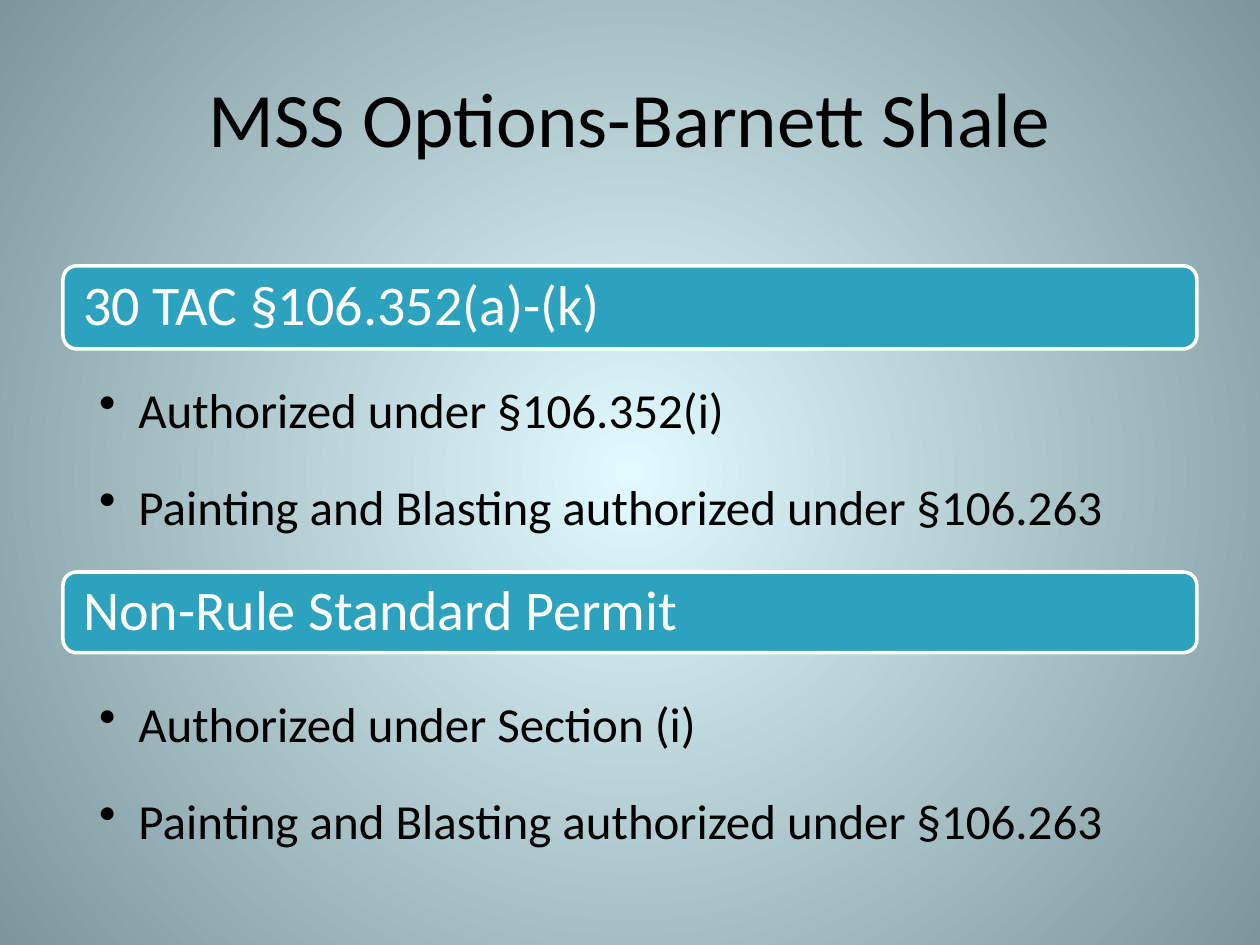
from dataclasses import dataclass

from lxml.etree import SubElement
from pptx import Presentation
from pptx.dml.color import RGBColor
from pptx.enum.shapes import MSO_SHAPE as Shape
from pptx.enum.text import MSO_ANCHOR as Anchor, PP_ALIGN as Align
from pptx.oxml.ns import qn
from pptx.util import Pt


@dataclass(frozen=True)
class Theme:
    font: str = "Calibri"
    title_size: float = 44
    heading_size: float = 32
    bullet_size: float = 28
    text: str = "000000"
    bar: str = "2DA2BF"
    bar_text: str = "FFFFFF"
    glow: str = "E1FAFF"
    edge: str = "7B969C"


@dataclass(frozen=True)
class Section:
    heading: str
    bullets: tuple[str, ...]
    bar_top: float
    bar_height: float
    list_top: float
    list_height: float


THEME = Theme()
LEFT, WIDTH = 36, 648
BULLET_INDENT = 22.5
PAINTING = "Painting and Blasting authorized under §106.263"
SECTIONS = (
    Section("30 TAC §106.352(a)-(k)", ("Authorized under §106.352(i)", PAINTING),
            151.9, 47.5, 197.3, 133.9),
    Section("Non-Rule Standard Permit", ("Authorized under Section (i)", PAINTING),
            326.9, 46.1, 376.6, 83.5),
)


def paint_background(page) -> None:
    fill = page.background.fill
    fill.gradient()
    for stop, color, position in zip(fill.gradient_stops, (THEME.glow, THEME.edge), (0, 1)):
        stop.color.rgb = RGBColor.from_string(color)
        stop.position = position
    # Turn the linear gradient into a circular one
    gradient = page.element.find(".//" + qn("a:gradFill"))
    linear = gradient.find(qn("a:lin"))
    if linear is not None:
        gradient.remove(linear)
    gradient.find(qn("a:gsLst")).addnext(circle := SubElement(gradient, qn("a:path"), path="circle"))
    SubElement(circle, qn("a:fillToRect"), {side: "50000" for side in "ltrb"})


def set_frame(frame, anchor: Anchor, left: float, right: float, vertical: float) -> None:
    frame.word_wrap = True
    frame.vertical_anchor = anchor
    frame.margin_left, frame.margin_right = Pt(left), Pt(right)
    frame.margin_top = frame.margin_bottom = Pt(vertical)


def style_para(para, size: float, color: str, align: Align = Align.LEFT) -> None:
    para.alignment = align
    for span in para.runs:
        span.font.name = THEME.font
        span.font.size = Pt(size)
        span.font.color.rgb = RGBColor.from_string(color)


def add_bullet(para) -> None:
    properties = para._p.get_or_add_pPr()
    properties.set("marL", str(Pt(BULLET_INDENT)))
    properties.set("indent", str(-Pt(BULLET_INDENT)))
    SubElement(properties, qn("a:buChar"), char="•")


def draw_title(page, text: str) -> None:
    box = page.shapes.add_textbox(Pt(LEFT), Pt(21.6), Pt(WIDTH), Pt(90))
    set_frame(box.text_frame, Anchor.MIDDLE, 7.2, 7.2, 3.6)
    box.text_frame.text = text
    style_para(box.text_frame.paragraphs[0], THEME.title_size, THEME.text, Align.CENTER)


def draw_section(page, section: Section) -> None:
    # Heading bar
    bar = page.shapes.add_shape(Shape.ROUNDED_RECTANGLE, Pt(LEFT), Pt(section.bar_top),
                                Pt(WIDTH), Pt(section.bar_height))
    bar.shadow.inherit = False
    bar.fill.solid()
    bar.fill.fore_color.rgb = RGBColor.from_string(THEME.bar)
    bar.line.color.rgb = RGBColor.from_string(THEME.bar_text)
    bar.line.width = Pt(2)
    set_frame(bar.text_frame, Anchor.MIDDLE, 9.3, 9.3, 0)
    bar.text_frame.text = section.heading
    heading = bar.text_frame.paragraphs[0]
    heading.line_spacing = 0.9
    style_para(heading, THEME.heading_size, THEME.bar_text)

    # Bulleted list
    box = page.shapes.add_textbox(Pt(LEFT), Pt(section.list_top),
                                  Pt(WIDTH), Pt(section.list_height))
    set_frame(box.text_frame, Anchor.TOP, 20.6, 16, 2.9)
    box.text_frame.text = "\n".join(section.bullets)
    for para in box.text_frame.paragraphs:
        para.line_spacing = 1.5
        para.space_after = Pt(5)
        style_para(para, THEME.bullet_size, THEME.text)
        add_bullet(para)


def main() -> None:
    deck = Presentation()
    deck.slide_width, deck.slide_height = Pt(720), Pt(540)
    page = deck.slides.add_slide(deck.slide_layouts[6])
    paint_background(page)
    for section in SECTIONS:
        draw_section(page, section)
    draw_title(page, "MSS Options-Barnett Shale")
    deck.save("out.pptx")


if __name__ == "__main__":
    main()
